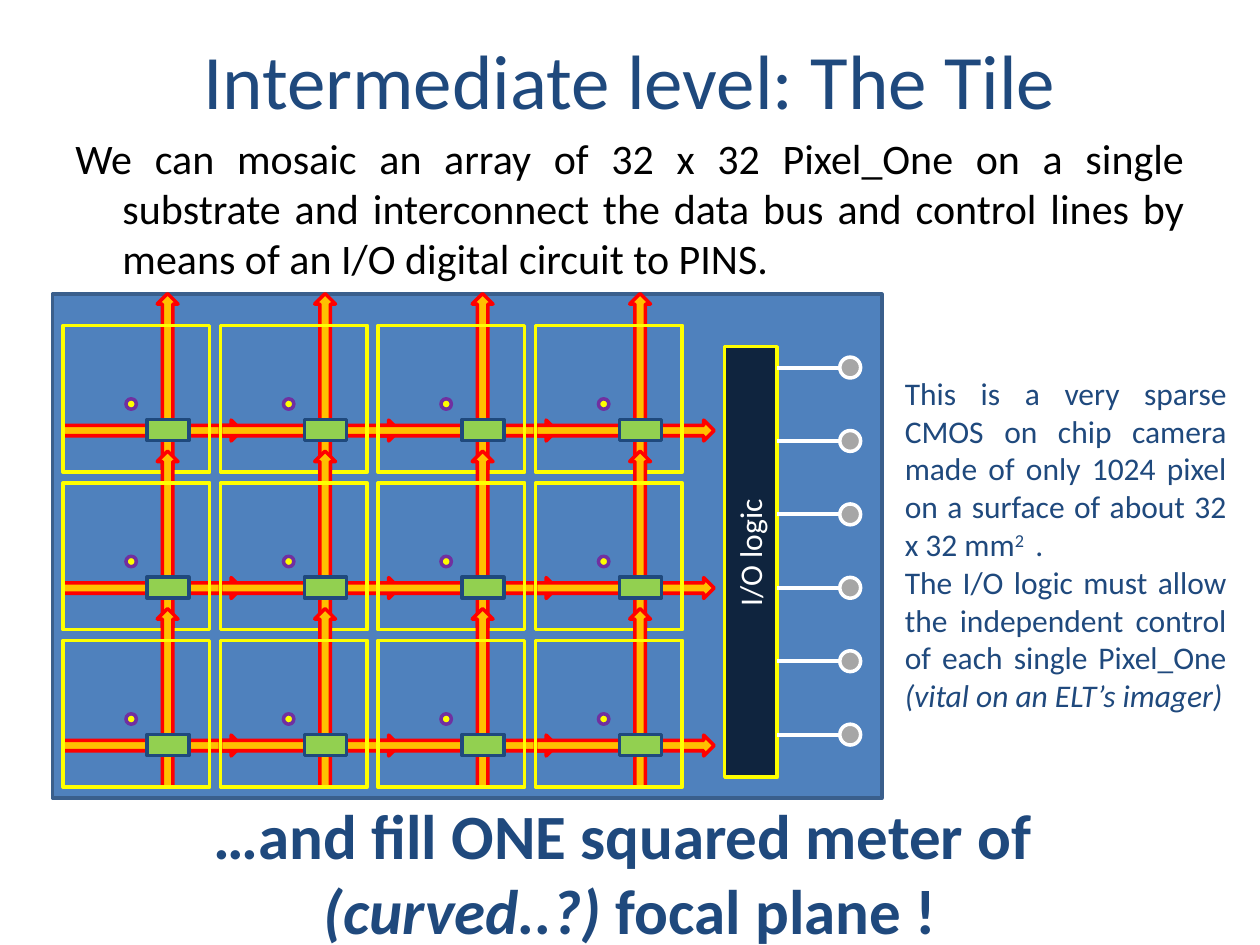
"""Build the slide about the tile of pixels."""
from lxml import etree
from pptx import Presentation, util as u
from pptx.dml.color import RGBColor
from pptx.enum import shapes as sh, text as tx
from pptx.oxml.ns import qn

Kind = sh.MSO_SHAPE
Al = tx.PP_ALIGN
NAVY = "1F497D"

deck = Presentation()
deck.slide_width, deck.slide_height = u.Cm(25.4), u.Cm(19.05)
slide = deck.slides.add_slide(deck.slide_layouts[5])
items = slide.shapes


def draw(kind, x, y, w, h, fill, line):
    shape = items.add_shape(kind, u.Cm(x), u.Cm(y), u.Cm(w), u.Cm(h))
    shape.shadow.inherit = False
    if fill:
        shape.fill.solid()
        shape.fill.fore_color.rgb = RGBColor.from_string(fill)
    else:
        shape.fill.background()
    shape.line.color.rgb = RGBColor.from_string(line)
    shape.line.width = u.Pt(2)
    return shape


def write(box, paras, size, color, align, bold=False):
    frame = box.text_frame
    for i, runs in enumerate(paras):
        para = frame.add_paragraph() if i else frame.paragraphs[0]
        para.alignment = align
        for words, style in runs:
            run = para.add_run()
            run.text = words
            font = run.font
            font.name, font.size, font.bold = "Calibri", u.Pt(size), bold
            font.color.rgb = RGBColor.from_string(color)
            font.italic = style == "italic"
            if style == "super":
                run._r.get_or_add_rPr().set("baseline", "30000")


title = items.title
title.left, title.top, title.width, title.height = u.Cm(1.27), u.Cm(0), u.Cm(22.86), u.Cm(3.18)
title.text_frame.vertical_anchor = tx.MSO_ANCHOR.MIDDLE
write(title, [[("Intermediate level: The Tile", "")]], 44, NAVY, Al.CENTER)

draw(Kind.RECTANGLE, 1.06, 5.93, 16.72, 10.16, "4F81BD", "3A5F8C")

pitch = 12.7 / 4
for row in range(3):
    for col in range(4):
        x, y = 1.27 + col * pitch, 6.56 + row * pitch
        bus = draw(Kind.UP_ARROW, x + 1.59, y + 0.32, 0.42, 3.6, "FFC000", "FF0000")
        bus.rotation = 90
        draw(Kind.UP_ARROW, x + 1.9, y - 0.64, 0.42, 3.6, "FFC000", "FF0000")
        draw(Kind.RECTANGLE, x, y, 2.96, 2.96, None, "FFFF00")
        draw(Kind.OVAL, x + 1.27, y + 1.48, 0.21, 0.21, "FFFF00", "7030A0")
        draw(Kind.RECTANGLE, x + 1.69, y + 1.9, 0.85, 0.42, "92D050", NAVY)

draw(Kind.RECTANGLE, 14.61, 6.99, 1.06, 8.68, "0F243E", "FFFF00")
for pin in range(6):
    y = 7.41 + pin * 1.48
    draw(Kind.OVAL, 16.93, y - 0.21, 0.42, 0.42, "A6A6A6", "FFFFFF")
    wire = items.add_connector(sh.MSO_CONNECTOR.STRAIGHT, u.Cm(16.93), u.Cm(y), u.Cm(15.67), u.Cm(y))
    wire.line.color.rgb = RGBColor.from_string("FFFFFF")
    wire.line.width = u.Pt(2.25)
    etree.SubElement(wire._element.spPr, qn("a:effectLst"))

body = items.add_textbox(u.Cm(1.27), u.Cm(2.54), u.Cm(22.86), u.Cm(12.57))
body.text_frame.word_wrap = True
write(body, [[("We can mosaic an array of 32 x 32 Pixel_One on a single substrate and "
               "interconnect the data bus and control lines by means of an I/O digital "
               "circuit to PINS.", "")]], 24, "000000", Al.JUSTIFY)
props = body.text_frame.paragraphs[0]._p.get_or_add_pPr()
props.set("marL", str(u.Cm(0.95)))
props.set("indent", str(u.Cm(-0.95)))

logic = items.add_textbox(u.Cm(13.77), u.Cm(10.62), u.Cm(2.69), u.Cm(1.02))
logic.rotation = 270
logic.text_frame.word_wrap = False
write(logic, [[("I/O logic", "")]], 18, "FFFFFF", Al.LEFT)

note = items.add_textbox(u.Cm(17.99), u.Cm(7.41), u.Cm(6.99), u.Cm(7.2))
note.text_frame.word_wrap = True
write(note, [
    [("This is a very sparse CMOS on chip camera made of only 1024 pixel on a "
      "surface of about 32 x 32 mm", ""), ("2 ", "super"), (" .", "")],
    [("The I/O logic must allow the independent control of each single Pixel_One ", ""),
     ("(vital on an ELT’s imager)", "italic")],
], 18, NAVY, Al.JUSTIFY)

goal = items.add_textbox(u.Cm(0), u.Cm(15.93), u.Cm(25.4), u.Cm(3.33))
goal.text_frame.word_wrap = True
write(goal, [
    [("…and fill ONE squared meter of ", "")],
    [("(curved..?) ", "italic"), ("focal plane !", "")],
], 36, NAVY, Al.CENTER, True)

deck.save("out.pptx")
